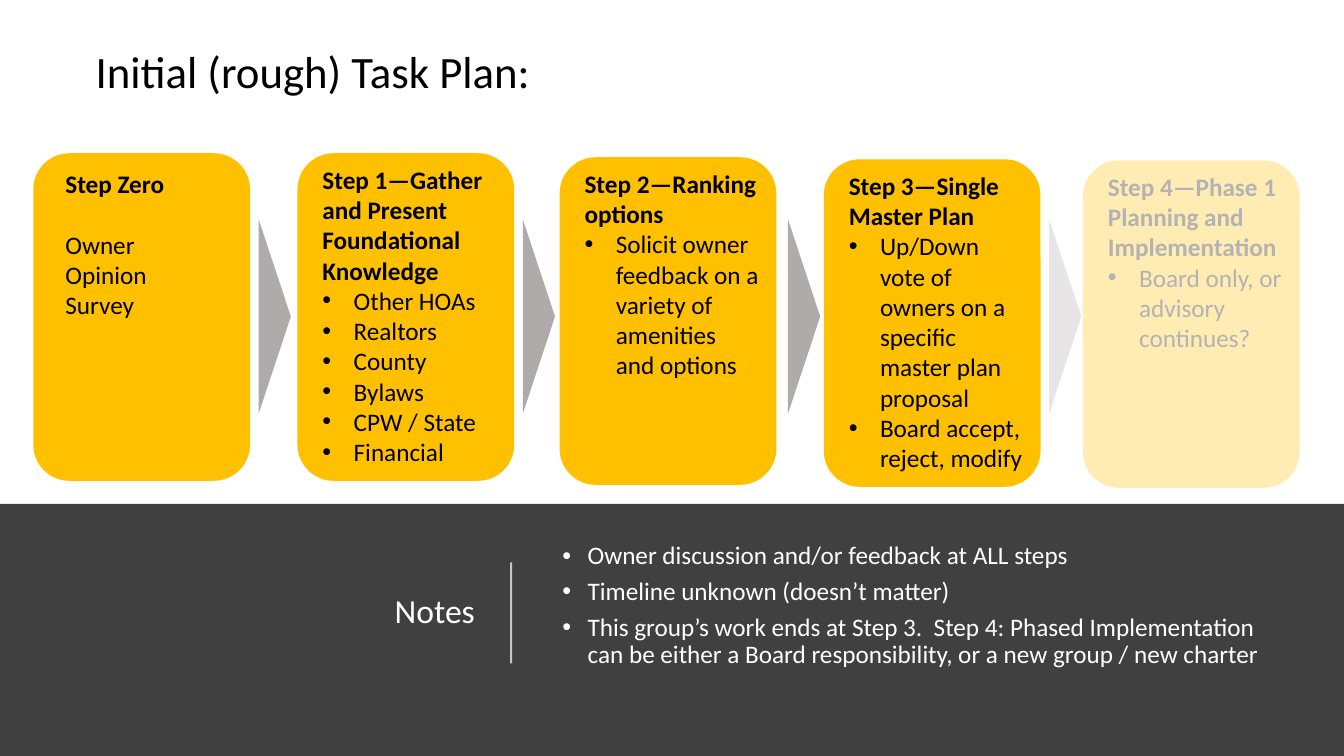
from dataclasses import dataclass

from lxml import etree
from pptx import Presentation
from pptx.dml.color import RGBColor
from pptx.enum.shapes import MSO_CONNECTOR, MSO_SHAPE
from pptx.enum.text import MSO_ANCHOR, MSO_AUTO_SIZE, PP_ALIGN
from pptx.oxml.ns import qn
from pptx.util import Emu, Pt

RECTANGLE = MSO_SHAPE.RECTANGLE
ROUNDED = MSO_SHAPE.ROUNDED_RECTANGLE
TRIANGLE = MSO_SHAPE.ISOSCELES_TRIANGLE
STRAIGHT = MSO_CONNECTOR.STRAIGHT
TOP, MIDDLE = MSO_ANCHOR.TOP, MSO_ANCHOR.MIDDLE
LEFT, RIGHT = PP_ALIGN.LEFT, PP_ALIGN.RIGHT
FIXED = MSO_AUTO_SIZE.NONE

SCALE = 9144
FONT = "Calibri"
COLORS = {
    "band": "404040",
    "card": "FFC000",
    "arrow": "AFABAB",
    "white": "FFFFFF",
    "black": "000000",
}
CARD_WIDTH, CARD_HEIGHT = 215, 325
ARROW_LENGTH, ARROW_DEPTH, ARROW_TOP = 193, 32, 298


@dataclass
class Step:
    left: int
    top: int
    heading: str
    items: list[str]
    text_height: int
    text_left: int = 15
    text_top: int = 6
    text_width: int = 193
    bulleted: bool = True


STEPS = [
    Step(33, 152, "Step Zero", ["Owner Opinion Survey"], 162, 22, 10, 168, False),
    Step(295, 152, "Step 1—Gather and Present Foundational Knowledge",
         ["Other HOAs", "Realtors", "County", "Bylaws", "CPW / State", "Financial"], 343),
    Step(555, 156, "Step 2—Ranking options",
         ["Solicit owner feedback on a variety of amenities and options"], 252),
    Step(817, 158, "Step 3—Single Master Plan",
         ["Up/Down vote of owners on a specific master plan proposal",
          "Board accept, reject, modify"], 313),
    Step(1074, 159, "Step 4—Phase 1 Planning and Implementation",
         ["Board only, or advisory continues?"], 192),
]
ARROW_LEFTS = [176, 438, 701, 960]
NOTES = [
    "Owner discussion and/or feedback at ALL steps",
    "Timeline unknown (doesn’t matter)",
    "This group’s work ends at Step 3.  Step 4: Phased Implementation "
    "can be either a Board responsibility, or a new group / new charter",
]


def px(length: int) -> Emu:
    return Emu(length * SCALE)


def color(name: str) -> RGBColor:
    return RGBColor.from_string(COLORS[name])


def set_opacity(properties, percent: int) -> None:
    rgb = next(properties.iter(qn("a:srgbClr")))
    etree.SubElement(rgb, qn("a:alpha")).set("val", str(percent * 1000))


def add_block(slide, kind, left: int, top: int, width: int, height: int, fill: str):
    shape = slide.shapes.add_shape(kind, px(left), px(top), px(width), px(height))
    shape.shadow.inherit = False
    shape.fill.solid()
    shape.fill.fore_color.rgb = color(fill)
    shape.line.fill.background()
    return shape


def prepare_frame(shape, anchor=TOP):
    frame = shape.text_frame
    frame.word_wrap = True
    frame.auto_size = FIXED
    frame.vertical_anchor = anchor
    return frame


def add_frame(slide, left: int, top: int, width: int, height: int):
    box = slide.shapes.add_textbox(px(left), px(top), px(width), px(height))
    return prepare_frame(box)


def write(frame, text: str, *, size: int = 18, ink: str = "black", bold: bool = False,
          align=LEFT, spacing: float = 1.0, before: int = 0, after: int = 0,
          indent: int = 0, hanging: int = 0) -> None:
    first = frame.paragraphs[0]
    paragraph = frame.add_paragraph() if first.runs else first
    paragraph.alignment = align
    paragraph.line_spacing = spacing
    paragraph.space_before = Pt(before)
    paragraph.space_after = Pt(after)
    if hanging:
        properties = paragraph._p.get_or_add_pPr()
        properties.set("marL", str(px(indent)))
        properties.set("indent", str(px(-hanging)))
        etree.SubElement(properties, qn("a:buFont")).set("typeface", "Arial")
        etree.SubElement(properties, qn("a:buChar")).set("char", "•")
    run = paragraph.add_run()
    run.text = text
    run.font.name = FONT
    run.font.size = Pt(size)
    run.font.bold = bold
    run.font.color.rgb = color(ink)


def add_notes(slide) -> None:
    add_block(slide, RECTANGLE, 0, 500, 1333, 250, "band")
    title = slide.shapes.title
    slide.shapes.element.append(title.element)
    title.left, title.top = px(69), px(535)
    title.width, title.height = px(412), px(145)
    write(prepare_frame(title, MIDDLE), "Notes", size=24, ink="white",
          align=RIGHT, spacing=0.9)

    divider = slide.shapes.add_connector(STRAIGHT, px(507), px(658), px(507), px(558))
    divider.line.width = Pt(1.5)
    divider.line.color.rgb = color("white")
    properties = divider.element.spPr
    set_opacity(properties, 70)
    etree.SubElement(properties, qn("a:effectLst"))

    frame = add_frame(slide, 542, 534, 730, 150)
    for note in NOTES:
        write(frame, note, ink="white", spacing=0.9, after=6, indent=31, hanging=25)


def add_step(slide, step: Step) -> None:
    add_block(slide, ROUNDED, step.left, step.top, CARD_WIDTH, CARD_HEIGHT, "card")
    frame = add_frame(slide, step.left + step.text_left, step.top + step.text_top,
                      step.text_width, step.text_height)
    write(frame, step.heading, bold=True)
    for item in step.items:
        if step.bulleted:
            write(frame, item, indent=31, hanging=31)
        else:
            write(frame, item, before=22)


def main() -> None:
    presentation = Presentation()
    presentation.slide_width, presentation.slide_height = px(1333), px(750)
    title_only = presentation.slide_layouts.get_by_name("Title Only")
    slide = presentation.slides.add_slide(title_only)

    add_notes(slide)
    write(add_frame(slide, 85, 38, 1178, 125), "Initial (rough) Task Plan:", size=32)
    for step in STEPS:
        add_step(slide, step)
    for left in ARROW_LEFTS:
        arrow = add_block(slide, TRIANGLE, left, ARROW_TOP, ARROW_LENGTH, ARROW_DEPTH, "arrow")
        arrow.rotation = 90
    veil = add_block(slide, RECTANGLE, 1035, 156, 259, 329, "white")
    set_opacity(veil.element.spPr, 70)

    presentation.save("out.pptx")


if __name__ == "__main__":
    main()
